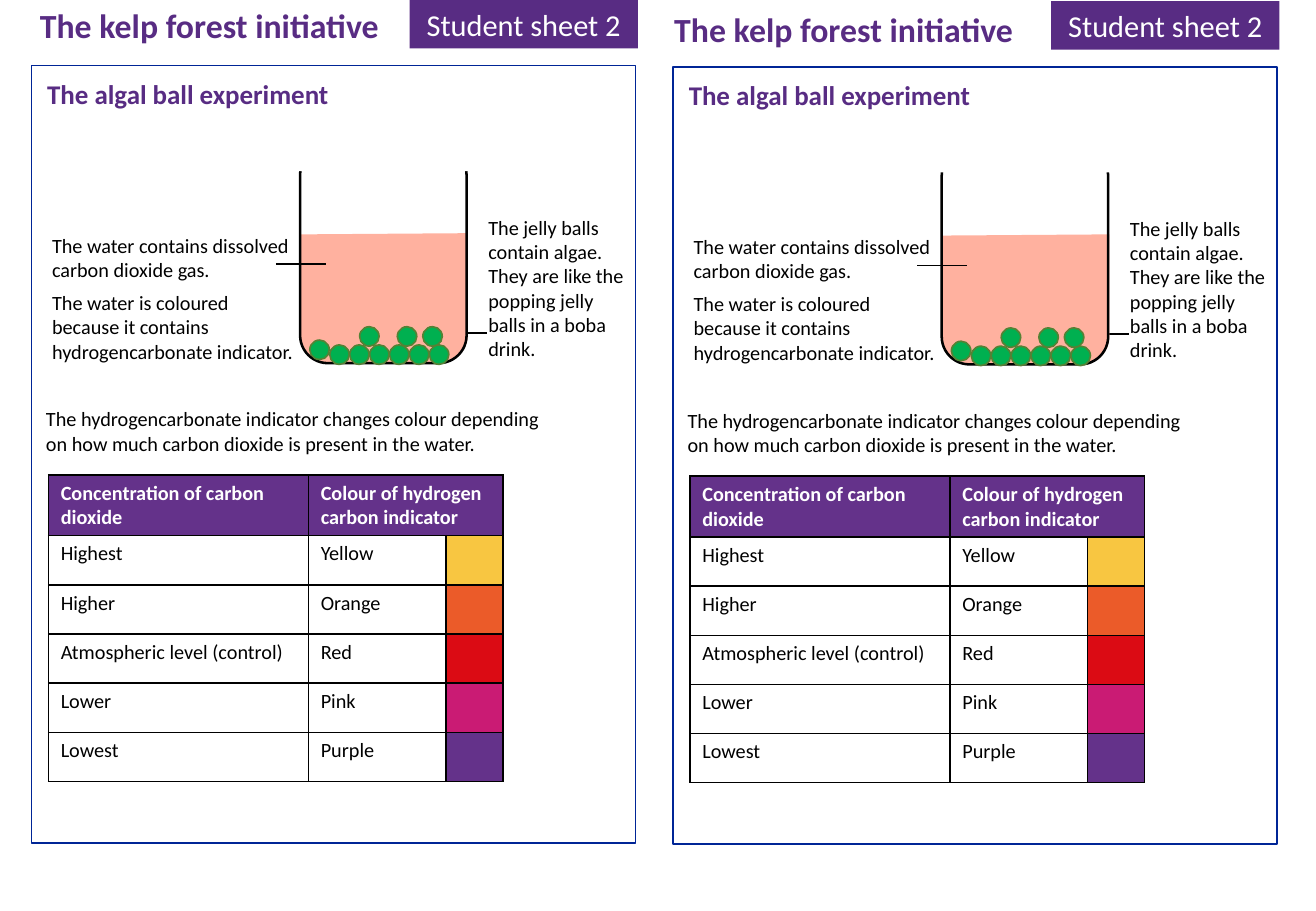
from math import cos, pi, sin

from lxml import etree
from pptx import Presentation
from pptx.dml.color import RGBColor
from pptx.enum.shapes import MSO_CONNECTOR, MSO_SHAPE as SHAPE
from pptx.enum.text import MSO_ANCHOR, MSO_AUTO_SIZE, PP_ALIGN
from pptx.oxml import parse_xml
from pptx.oxml.ns import nsdecls, qn
from pptx.util import Inches, Pt

BLACK = RGBColor(0x00, 0x00, 0x00)
WHITE = RGBColor(0xFF, 0xFF, 0xFF)
VIOLET = RGBColor(0x58, 0x2C, 0x83)
PURPLE = RGBColor(0x64, 0x32, 0x8A)
FRAME_BLUE = RGBColor(0x00, 0x25, 0x96)
WATER_PINK = RGBColor(0xFF, 0xB1, 0x9F)
ALGAE_GREEN = RGBColor(0x00, 0xB0, 0x50)
ALGAE_EDGE = RGBColor(0x54, 0x82, 0x35)

SHEET_PITCH = 5.28
SHEET_DROP = 0.01
BALL = 0.16

INDICATOR = [
    ("Highest", "Yellow", RGBColor(0xF8, 0xC6, 0x41)),
    ("Higher", "Orange", RGBColor(0xEB, 0x5B, 0x29)),
    ("Atmospheric level (control)", "Red", RGBColor(0xDB, 0x0B, 0x14)),
    ("Lower", "Pink", RGBColor(0xCA, 0x1B, 0x74)),
    ("Lowest", "Purple", PURPLE),
]
# left, top, width, height, words, size, colour, bold
TEXTS = [
    (0.29, 0.59, 4.9, 0.37, "The algal ball experiment", 16, VIOLET, True),
    (0.33, 1.87, 2.23, 0.5, "The water contains dissolved carbon dioxide gas.",
     12, BLACK, False),
    (0.33, 2.34, 2.21, 0.91, "The water is coloured because it contains "
     "hydrogencarbonate indicator.", 12, BLACK, False),
    (3.92, 1.72, 1.38, 1.31, "The jelly balls contain algae. They are like the "
     "popping jelly balls in a boba drink.", 12, BLACK, False),
    (0.28, 3.3, 4.38, 0.5, "The hydrogencarbonate indicator changes colour depending "
     "on how much carbon dioxide is present in the water.", 12, BLACK, False),
]
BALLS = [(2.55, 2.8)]
BALLS += [(2.55 + 0.164 * i, 2.84) for i in range(1, 7)]
BALLS += [(left, 2.69) for left in (2.96, 3.27, 3.48)]


def write(frame, words, size, colour, bold=False):
    frame.word_wrap = True
    run = frame.paragraphs[0].add_run()
    run.text = words
    run.font.name = "Calibri"
    run.font.size = Pt(size)
    run.font.bold = bold
    run.font.color.rgb = colour


def paint(shape, fill=None, line=None, weight=1):
    """Set fill and outline, with none where no colour is given."""
    shape.shadow.inherit = False
    if fill is None:
        shape.fill.background()
    else:
        shape.fill.solid()
        shape.fill.fore_color.rgb = fill
    if line is None:
        shape.line.fill.background()
    else:
        shape.line.color.rgb = line
        shape.line.width = Pt(weight)


prs = Presentation()
prs.slide_width, prs.slide_height = Inches(10.83), Inches(7.5)
slide = prs.slides.add_slide(prs.slide_layouts[6])
shapes = slide.shapes

for sheet, (title_left, title_top) in enumerate([(0.23, -0.01), (5.45, 0.02)]):
    dx, dy = sheet * SHEET_PITCH, sheet * SHEET_DROP

    # Heading and frame
    banner = shapes.add_shape(SHAPE.RECTANGLE, Inches(3.37 + dx), Inches(dy),
                              Inches(1.88), Inches(0.4))
    paint(banner, VIOLET)
    write(banner.text_frame, "Student sheet 2", 18, WHITE)
    banner.text_frame.vertical_anchor = MSO_ANCHOR.TOP
    banner.text_frame.paragraphs[0].alignment = PP_ALIGN.CENTER
    frame = shapes.add_shape(SHAPE.RECTANGLE, Inches(0.26 + dx), Inches(0.54 + dy),
                             Inches(4.97), Inches(6.4))
    paint(frame, line=FRAME_BLUE)

    title = (title_left - dx, title_top - dy, 4.29, 0.44,
             "The kelp forest initiative", 20, VIOLET, True)
    for left, top, width, height, words, size, colour, bold in [title] + TEXTS:
        label = shapes.add_textbox(Inches(left + dx), Inches(top + dy),
                                   Inches(width), Inches(height))
        write(label.text_frame, words, size, colour, bold)
        label.text_frame.auto_size = MSO_AUTO_SIZE.SHAPE_TO_FIT_TEXT

    # Indicator table
    table = shapes.add_table(6, 3, Inches(0.4 + dx), Inches(3.91 + dy),
                             Inches(3.74), Inches(2.43)).table
    for column, width in zip(table.columns, (2.14, 1.13, 0.47)):
        column.width = Inches(width)
    for cell in table.iter_cells():
        cell_props = cell._tc.get_or_add_tcPr()
        for side in ("lnL", "lnR", "lnT", "lnB"):
            cell_props.append(parse_xml(
                f'<a:{side} {nsdecls("a")} w="12700"><a:solidFill>'
                f'<a:srgbClr val="000000"/></a:solidFill></a:{side}>'))
        cell.fill.background()
    table.cell(0, 1).merge(table.cell(0, 2))
    for col, heading in enumerate(["Concentration of carbon dioxide",
                                   "Colour of hydrogen carbon indicator"]):
        cell = table.cell(0, col)
        cell.fill.solid()
        cell.fill.fore_color.rgb = PURPLE
        write(cell.text_frame, heading, 12, WHITE, True)
    for row, (level, name, colour) in enumerate(INDICATOR, 1):
        write(table.cell(row, 0).text_frame, level, 12, BLACK)
        write(table.cell(row, 1).text_frame, name, 12, BLACK)
        swatch = table.cell(row, 2)
        swatch.fill.solid()
        swatch.fill.fore_color.rgb = colour

    # Beaker between its two leader lines: the jelly one behind, the water one in front
    for start, end, height in [(3.61, 4.01, 2.74), (2.27, 2.68, 2.175)]:
        leader = shapes.add_connector(MSO_CONNECTOR.STRAIGHT,
                                      Inches(start + dx), Inches(height + dy),
                                      Inches(end + dx), Inches(height + dy))
        leader.line.color.rgb = BLACK
        leader.line.width = Pt(1)
        etree.SubElement(leader._element.spPr, qn("a:effectLst"))
        if start < 3:
            continue

        beaker = shapes.add_group_shape().shapes
        left, right, surface, bottom, radius = 2.47, 3.85, 1.92, 2.99, 0.23
        outline = [(right, surface)]
        for centre, first in [(right - radius, 0), (left + radius, pi / 2)]:
            for step in range(9):
                angle = first + step * pi / 16
                outline.append((centre + radius * cos(angle),
                                bottom - radius + radius * sin(angle)))
        points = [(Inches(x + dx), Inches(y + dy)) for x, y in outline]
        builder = beaker.build_freeform(Inches(left + dx), Inches(surface + 0.01 + dy))
        builder.add_line_segments(points, close=True)
        paint(builder.convert_to_shape(), WATER_PINK)

        glass = beaker.add_shape(SHAPE.ROUNDED_RECTANGLE, Inches(2.47 + dx),
                                 Inches(1.21 + dy), Inches(1.37), Inches(1.78))
        paint(glass, line=BLACK, weight=1.5)
        open_top = beaker.add_shape(SHAPE.RECTANGLE, Inches(2.36 + dx),
                                    Inches(1.04 + dy), Inches(1.66), Inches(0.37))
        paint(open_top, WHITE)
        for x, y in BALLS:
            ball = beaker.add_shape(SHAPE.OVAL, Inches(x + dx), Inches(y + dy),
                                    Inches(BALL), Inches(BALL))
            paint(ball, ALGAE_GREEN, ALGAE_EDGE)

prs.save("out.pptx")
